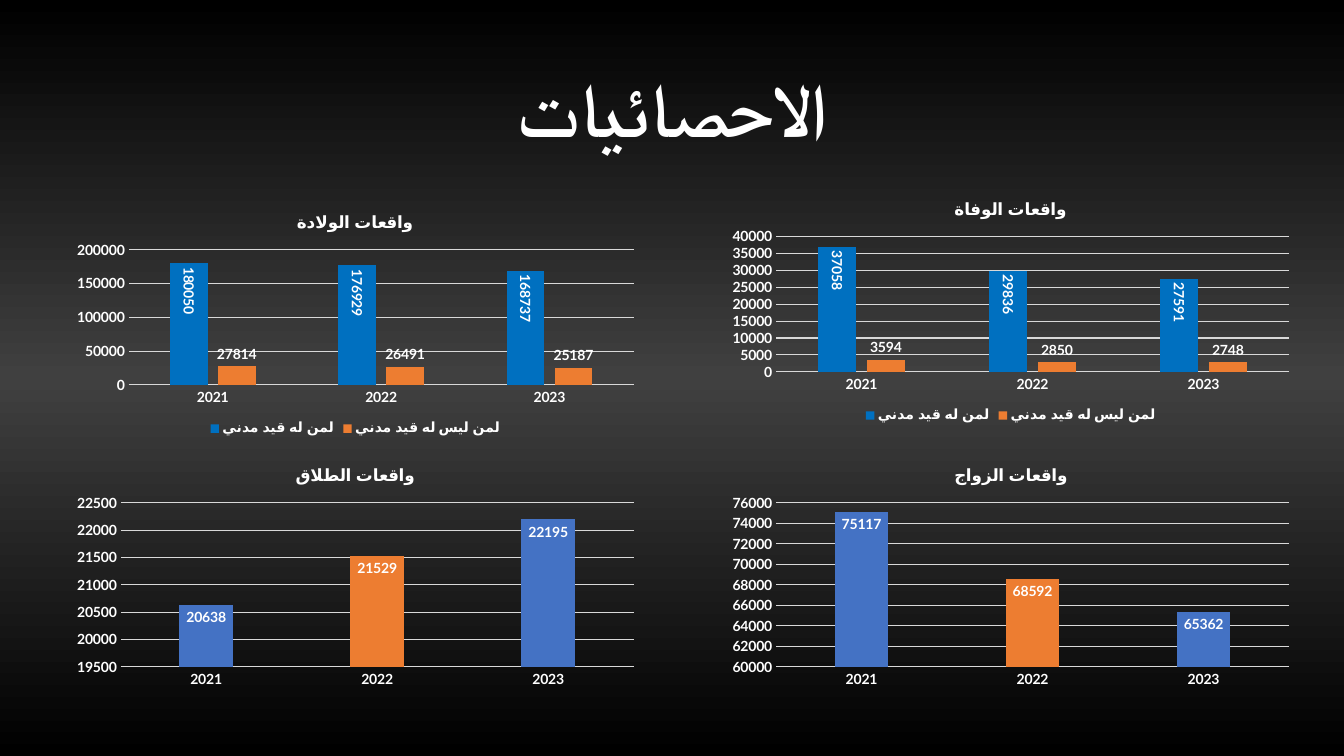
from copy import deepcopy

from pptx import Presentation
from pptx.chart.data import CategoryChartData
from pptx.dml.color import RGBColor
from pptx.enum.chart import XL_CHART_TYPE, XL_LABEL_POSITION, XL_LEGEND_POSITION, XL_TICK_MARK
from pptx.enum.text import MSO_ANCHOR, PP_ALIGN
from pptx.oxml.ns import qn
from pptx.util import Inches, Pt

COLUMNS = XL_CHART_TYPE.COLUMN_CLUSTERED
INSIDE, OUTSIDE = XL_LABEL_POSITION.INSIDE_END, XL_LABEL_POSITION.OUTSIDE_END
BOTTOM, NO_TICK = XL_LEGEND_POSITION.BOTTOM, XL_TICK_MARK.NONE
MIDDLE, CENTER = MSO_ANCHOR.MIDDLE, PP_ALIGN.CENTER

FONT, WHITE, GRID = "Lato", "FFFFFF", "D9D9D9"
BLUE, ORANGE, PLAIN_BLUE = "0070C0", "ED7D31", "4472C4"
BACKGROUND = [(0, "000000"), (0.5, "404040"), (1, "000000")]
TITLE = "الاحصائيات"
YEARS = ["2021", "2022", "2023"]
REGISTERED, UNREGISTERED = "لمن له قيد مدني", "لمن ليس له قيد مدني"
LEFT, RIGHT, LOWER = 0.65, 7.15, 4.49
CHART_SIZE = Inches(5.75), Inches(2.38)
CHARTS = [
    {"title": "واقعات الوفاة", "at": (RIGHT, 1.85), "scale": (0, 40000, 5000),
     "series": {REGISTERED: (37058, 29836, 27591), UNREGISTERED: (3594, 2850, 2748)}},
    {"title": "واقعات الزواج", "at": (RIGHT, LOWER), "scale": (60000, 76000, 2000),
     "series": {"Series 1": (75117, 68592, 65362)}},
    {"title": "واقعات الطلاق", "at": (LEFT, LOWER), "scale": (19500, 22500, 500),
     "series": {"Series 1": (20638, 21529, 22195)}},
    {"title": "واقعات الولادة", "at": (LEFT, 1.98), "scale": (0, 200000, 50000),
     "series": {REGISTERED: (180050, 176929, 168737), UNREGISTERED: (27814, 26491, 25187)}},
]


def rgb(value):
    return RGBColor.from_string(value)


def set_all(obj, values):
    for name, value in values.items():
        setattr(obj, name, value)


def style_font(font, size):
    set_all(font, {"name": FONT, "size": Pt(size), "bold": True})
    font.color.rgb = rgb(WHITE)


def style_line(line):
    line.color.rgb = rgb(GRID)
    line.width = Pt(0.75)


def paint(part, color):
    part.format.fill.solid()
    part.format.fill.fore_color.rgb = rgb(color)


def set_background(s):
    fill = s.background.fill
    fill.gradient()
    fill.gradient_angle = 90
    first = s.element.find(".//" + qn("a:gs"))
    first.addnext(deepcopy(first))
    for stop, (position, color) in zip(fill.gradient_stops, BACKGROUND):
        stop.position = position
        stop.color.rgb = rgb(color)


def add_title(s):
    tf = s.shapes.add_textbox(Inches(0.92), Inches(0.4), Inches(11.5), Inches(1.45)).text_frame
    set_all(tf, {"word_wrap": True, "vertical_anchor": MIDDLE})
    p = tf.paragraphs[0]
    set_all(p, {"alignment": CENTER, "line_spacing": 0.9})
    r = p.add_run()
    r.text = TITLE
    style_font(r.font, 54)


def style_axes(chart, scale):
    for axis in (chart.category_axis, chart.value_axis):
        set_all(axis, {"major_tick_mark": NO_TICK, "minor_tick_mark": NO_TICK})
        style_font(axis.tick_labels.font, 10)
    style_line(chart.category_axis.format.line)
    axis = chart.value_axis
    axis.format.line.fill.background()
    style_line(axis.major_gridlines.format.line)
    set_all(axis, dict(zip(("minimum_scale", "maximum_scale", "major_unit"), scale)))


def style_series(series, color, position, upright):
    paint(series, color)
    labels = series.data_labels
    set_all(labels, {"show_value": True, "position": position})
    style_font(labels.font, 10)
    if upright:
        labels._element.find(".//" + qn("a:bodyPr")).set("rot", "5400000")


def add_column_chart(s, item):
    data = CategoryChartData()
    data.categories = YEARS
    for name, values in item["series"].items():
        data.add_series(name, values)
    x, y = map(Inches, item["at"])
    chart = s.shapes.add_chart(COLUMNS, x, y, *CHART_SIZE, data).chart
    style_font(chart.font, 10)

    paired = len(item["series"]) == 2
    chart.has_title = True
    r = chart.chart_title.text_frame.paragraphs[0].add_run()
    r.text = item["title"]
    style_font(r.font, 12)
    chart.has_legend = paired
    if paired:
        set_all(chart.legend, {"position": BOTTOM, "include_in_layout": False})
        style_font(chart.legend.font, 10)

    style_axes(chart, item["scale"])
    plot = chart.plots[0]
    set_all(plot, {"gap_width": 219, "overlap": -27, "vary_by_categories": False})
    first = plot.series[0]
    style_series(first, BLUE if paired else PLAIN_BLUE, INSIDE, paired)
    if paired:
        style_series(plot.series[1], ORANGE, OUTSIDE, False)
    else:
        paint(first.points[1], ORANGE)


def main():
    prs = Presentation()
    set_all(prs, {"slide_width": Inches(13.33), "slide_height": Inches(7.5)})
    s = prs.slides.add_slide(prs.slide_layouts[6])
    set_background(s)
    add_title(s)
    for item in CHARTS:
        add_column_chart(s, item)
    prs.save("out.pptx")


if __name__ == "__main__":
    main()
